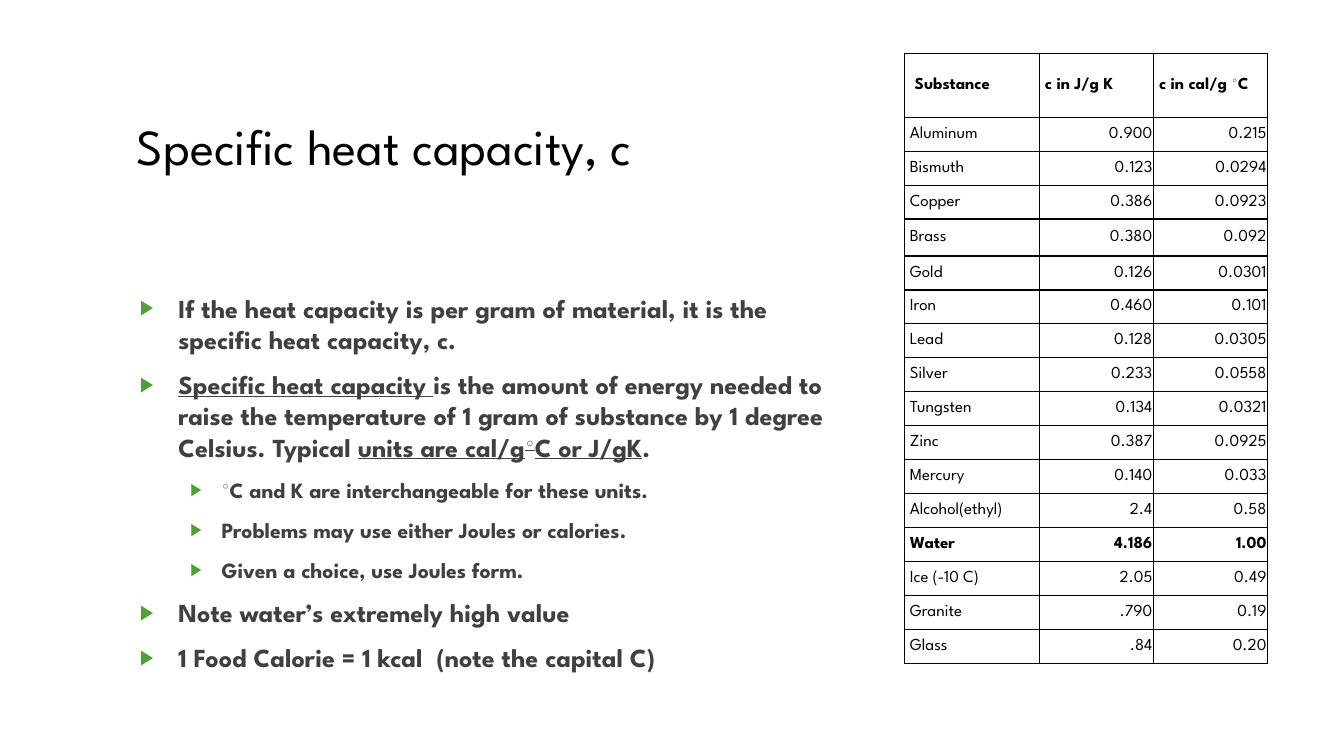
"""Build the slide on specific heat capacity."""
from dataclasses import dataclass
from typing import Any

from lxml.etree import SubElement as Sub
from pptx import Presentation
from pptx.dml.color import RGBColor as Rgb
from pptx.enum.text import MSO_ANCHOR as Anchor, PP_ALIGN as Align
from pptx.oxml import parse_xml
from pptx.oxml.ns import nsdecls, qn
from pptx.util import Pt

FONT = "League Spartan"
HUES = {"black": "000000", "gray": "404040", "green": "549E39"}


@dataclass(frozen=True)
class Bit:
    text: str
    under: bool = False
    sup: bool = False


@dataclass(frozen=True)
class Point:
    bits: tuple[Bit, ...]
    level: int = 0


@dataclass(frozen=True)
class Level:
    left: float
    hang: float
    size: float


@dataclass(frozen=True)
class Row:
    cells: tuple[tuple[Bit, ...], ...]
    height: float = 24.24
    bold: bool = False
    head: bool = False


def entry(name: str, joule: str, cal: str, **form: Any) -> Row:
    return Row(((Bit(name),), (Bit(joule),), (Bit(cal),)), **form)


LEVELS = (Level(27.4, 27.4, 18.6), Level(58.3, 22.3, 15.5))

POINTS = (
    Point((Bit("If the heat capacity is per gram of material, it is the specific heat capacity, c."),)),
    Point((
        Bit("Specific heat capacity ", under=True),
        Bit("is the amount of energy needed to raise the temperature of 1 gram "
            "of substance by 1 degree Celsius. Typical "),
        Bit("units are cal/g", under=True),
        Bit("◦", under=True, sup=True),
        Bit("C or J/gK", under=True),
        Bit("."),
    )),
    Point((Bit("◦", sup=True), Bit("C and K are interchangeable for these units.")), 1),
    Point((Bit("Problems may use either Joules or calories."),), 1),
    Point((Bit("Given a choice, use Joules form."),), 1),
    Point((Bit("Note water’s extremely high value"),)),
    Point((Bit("1 Food Calorie = 1 kcal  (note the capital C)"),)),
)

WIDTHS = (96.5, 81.5, 81.5)
ROWS = (
    Row(((Bit("Substance"),), (Bit("c in J/g K"),),
         (Bit("c in cal/g "), Bit("◦", sup=True), Bit("C"))),
        height=45.36, bold=True, head=True),
    entry("Aluminum", "0.900", "0.215"),
    entry("Bismuth", "0.123", "0.0294"),
    entry("Copper", "0.386", "0.0923"),
    entry("Brass", "0.380", "0.092", height=26.4),
    entry("Gold", "0.126", "0.0301"),
    entry("Iron", "0.460", "0.101"),
    entry("Lead", "0.128", "0.0305"),
    entry("Silver", "0.233", "0.0558"),
    entry("Tungsten", "0.134", "0.0321"),
    entry("Zinc", "0.387", "0.0925"),
    entry("Mercury", "0.140", "0.033"),
    entry("Alcohol(ethyl)", "2.4", "0.58"),
    entry("Water", "4.186", "1.00", bold=True),
    entry("Ice (-10 C)", "2.05", "0.49"),
    entry("Granite", ".790", "0.19"),
    entry("Glass", ".84", "0.20"),
)


def write(para: Any, text: str, *, size: float, hue: str = "black",
          bold: bool = False, under: bool = False, sup: bool = False) -> None:
    run = para.add_run()
    run.text = text
    font = run.font
    font.name, font.size, font.bold, font.underline = FONT, Pt(size), bold, under
    font.color.rgb = Rgb.from_string(HUES[hue])
    if sup:
        run._r.get_or_add_rPr().set("baseline", "30000")


def add_box(slide: Any, left: float, top: float, width: float, height: float,
            anchor: Any) -> Any:
    frame = slide.shapes.add_textbox(Pt(left), Pt(top), Pt(width), Pt(height)).text_frame
    frame.word_wrap = True
    frame.vertical_anchor = anchor
    return frame


def mark(para: Any, level: Level) -> None:
    props = para._p.get_or_add_pPr()
    props.set("marL", str(Pt(level.left)))
    props.set("indent", str(-Pt(level.hang)))
    tint = Sub(props, qn("a:buClr"))
    Sub(tint, qn("a:srgbClr"), val=HUES["green"])
    Sub(props, qn("a:buSzPct"), val="80000")
    Sub(props, qn("a:buFont"), typeface="Arial")
    Sub(props, qn("a:buChar"), char="▶")


def add_points(frame: Any) -> None:
    for i, point in enumerate(POINTS):
        para = frame.add_paragraph() if i else frame.paragraphs[0]
        level = LEVELS[point.level]
        mark(para, level)
        para.level = point.level
        if i:
            para.space_before = Pt(10)
        for bit in point.bits:
            write(para, bit.text, size=level.size, hue="gray", bold=True,
                  under=bit.under, sup=bit.sup)


def edge(cell: Any) -> None:
    props = cell._tc.get_or_add_tcPr()
    for i, side in enumerate("LRTB"):
        props.insert(i, parse_xml(
            f'<a:ln{side} {nsdecls("a")} w="{Pt(1)}"><a:solidFill>'
            f'<a:srgbClr val="{HUES["black"]}"/></a:solidFill></a:ln{side}>'))


def add_grid(slide: Any) -> None:
    high = sum(row.height for row in ROWS)
    grid = slide.shapes.add_table(len(ROWS), len(WIDTHS), Pt(645.9), Pt(38.4),
                                  Pt(sum(WIDTHS)), Pt(high)).table
    grid.first_row = grid.horz_banding = False
    for col, width in zip(grid.columns, WIDTHS):
        col.width = Pt(width)
    for r, row in enumerate(ROWS):
        grid.rows[r].height = Pt(row.height)
        for c, bits in enumerate(row.cells):
            cell = grid.cell(r, c)
            cell.fill.background()
            edge(cell)
            cell.vertical_anchor = Anchor.MIDDLE
            cell.margin_right = cell.margin_top = cell.margin_bottom = Pt(0.75)
            number = c > 0 and not row.head
            wide = 7.5 if row.head and c == 0 else 4
            cell.margin_left = Pt(0.75 if number else wide)
            para = cell.text_frame.paragraphs[0]
            para.alignment = Align.RIGHT if number else Align.LEFT
            for bit in bits:
                write(para, bit.text, size=12, bold=row.bold, sup=bit.sup)


def main() -> None:
    deck = Presentation()
    deck.slide_width, deck.slide_height = Pt(960), Pt(540)
    slide = deck.slides.add_slide(deck.slide_layouts[6])
    title = add_box(slide, 90.7, 76.3, 694.8, 55.4, Anchor.MIDDLE)
    write(title.paragraphs[0], "Specific heat capacity, c", size=36)
    add_points(add_box(slide, 92.9, 205.2, 517, 269.3, Anchor.TOP))
    add_grid(slide)
    deck.save("out.pptx")


if __name__ == "__main__":
    main()
